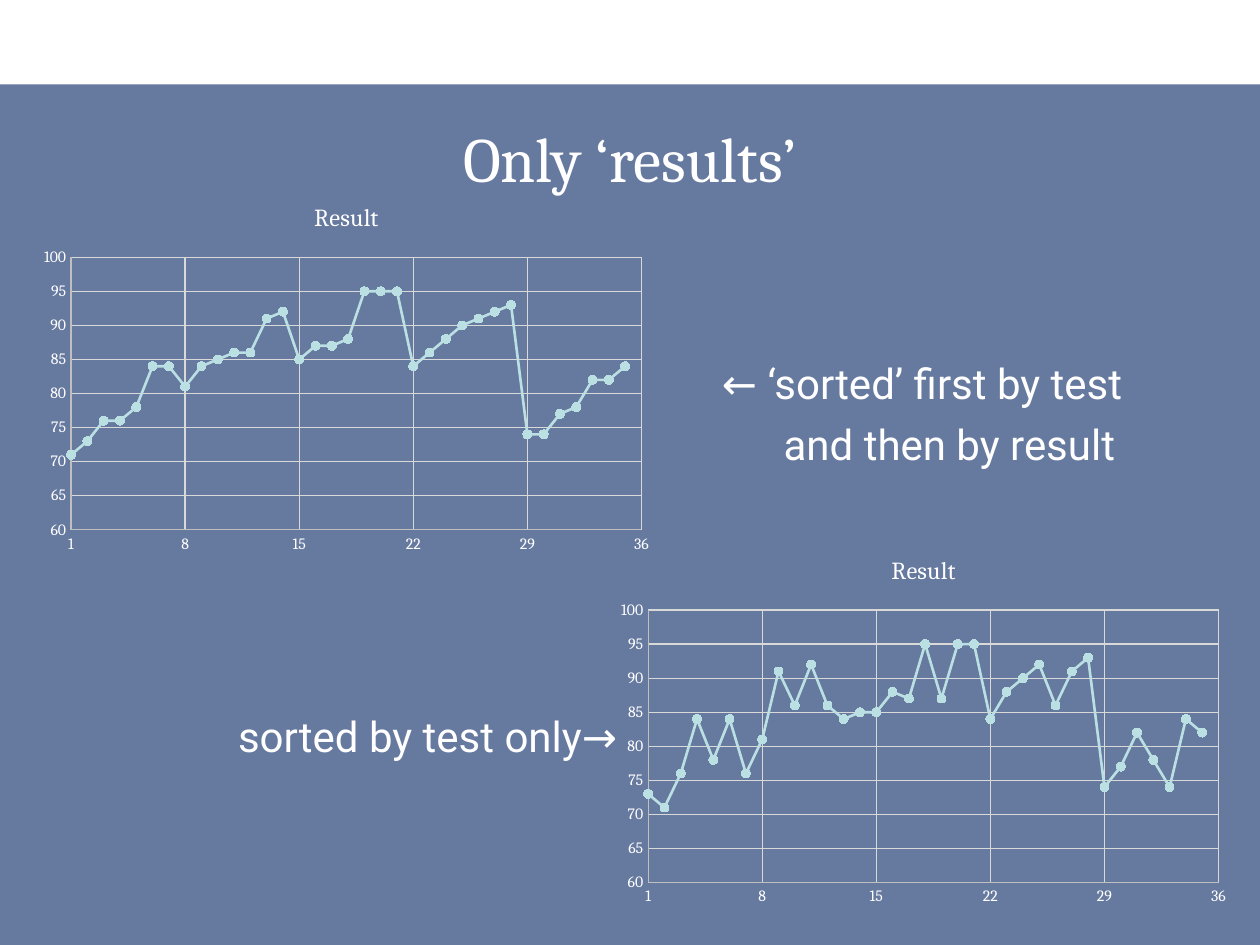
from lxml import etree
from pptx import Presentation
from pptx.chart.data import XyChartData
from pptx.dml.color import RGBColor
from pptx.enum.chart import XL_CHART_TYPE as Chart, XL_MARKER_STYLE as Marker, XL_TICK_MARK as Tick
from pptx.enum.shapes import MSO_SHAPE as Shape
from pptx.enum.text import MSO_ANCHOR as Anchor, PP_ALIGN as Align
from pptx.oxml.ns import qn
from pptx.util import Inches, Pt

COLORS = {"panel": "6679A0", "text": "FFFFFF", "series": "BBE0E3",
          "axis": "BFBFBF", "grid": "D9D9D9"}
HEAD, BODY = "Cambria", "Roboto"

TESTS = [
    [73, 71, 76, 84, 78, 84, 76],
    [81, 91, 86, 92, 86, 84, 85],
    [85, 88, 87, 95, 87, 95, 95],
    [84, 88, 90, 92, 86, 91, 93],
    [74, 77, 82, 78, 74, 84, 82],
]
CHARTS = [
    ((4.83, 4.25, 5, 3), TESTS),
    ((0.25, 1.45, 5, 3), [sorted(test) for test in TESTS]),
]
TITLE = ((0.25, 0.83, 9.5, 0.83), [("Only ‘results’", 0)])
NOTES = [
    ((5.73, 2.84, 3.8, 0.9), [("← ‘sorted’ first by test", 0), ("and then by result", 0.49)]),
    ((1.89, 5.64, 3.2, 0.45), [("sorted by test only→", 0)]),
]


def color(name):
    return RGBColor.from_string(COLORS[name])


def style_font(font, size, name):
    font.size, font.name = Pt(size), name
    font.bold = False
    font.color.rgb = color("text")


def style_line(line, name, width):
    line.color.rgb = color(name)
    line.width = Pt(width)


def add_text(slide, box, lines, size, font, align=Align.LEFT, anchor=Anchor.TOP):
    tf = slide.shapes.add_textbox(*map(Inches, box)).text_frame
    tf.word_wrap = True
    tf.vertical_anchor = anchor
    tf.margin_left = tf.margin_right = tf.margin_top = tf.margin_bottom = 0
    for i, (text, indent) in enumerate(lines):
        p = tf.paragraphs[0] if i == 0 else tf.add_paragraph()
        p.text = text
        p.alignment = align
        if indent:
            p._p.get_or_add_pPr().set("marL", str(Inches(indent)))
        if i:
            p.space_before = Pt(5.6)
        style_font(p.runs[0].font, size, font)


def style_axis(axis, low, high, step):
    axis.minimum_scale, axis.maximum_scale, axis.major_unit = low, high, step
    axis.major_tick_mark = axis.minor_tick_mark = Tick.NONE
    axis.has_major_gridlines = True
    style_line(axis.major_gridlines.format.line, "grid", 0.75)
    style_line(axis.format.line, "axis", 0.75)
    style_font(axis.tick_labels.font, 9, HEAD)
    axis.tick_labels.number_format = "General"
    axis.tick_labels.number_format_is_linked = False


def add_results(slide, box, tests):
    data = XyChartData()
    points = data.add_series("Result")
    for x, y in enumerate(sum(tests, []), 1):
        points.add_data_point(x, y)
    chart = slide.shapes.add_chart(Chart.XY_SCATTER_LINES, *map(Inches, box), data).chart
    style_font(chart.font, 10, HEAD)
    chart.has_legend = False
    chart.has_title = True
    tf = chart.chart_title.text_frame
    tf.text = "Result"
    style_font(tf.paragraphs[0].runs[0].font, 14, HEAD)
    chart.chart_title.include_in_layout = False
    style_axis(chart.category_axis, 1, 36, 7)
    style_axis(chart.value_axis, 60, 100, 5)
    plot = chart.plots[0]
    plot.vary_by_categories = False
    series = plot.series[0]
    series.smooth = False
    style_line(series.format.line, "series", 1.5)
    marker = series.marker
    marker.style, marker.size = Marker.CIRCLE, 5
    marker.format.fill.solid()
    marker.format.fill.fore_color.rgb = color("series")
    style_line(marker.format.line, "series", 0.75)


prs = Presentation()
prs.slide_width, prs.slide_height = Inches(10), Inches(7.5)
s = prs.slides.add_slide(prs.slide_layouts[6])

panel = s.shapes.add_shape(Shape.RECTANGLE, *map(Inches, (0, 0.67, 10, 6.83)))
panel.shadow.inherit = False
panel.fill.solid()
panel.fill.fore_color.rgb = color("panel")
panel.line.fill.background()
alpha = etree.SubElement(panel.fill._xPr.find(".//" + qn("a:srgbClr")), qn("a:alpha"))
alpha.set("val", "60000")
panel.fill.fore_color.rgb = RGBColor.from_string("002060")

add_text(s, *TITLE, 36, HEAD, Align.CENTER, Anchor.MIDDLE)
for box, lines in NOTES:
    add_text(s, box, lines, 24, BODY)
for box, tests in CHARTS:
    add_results(s, box, tests)

prs.save("out.pptx")
